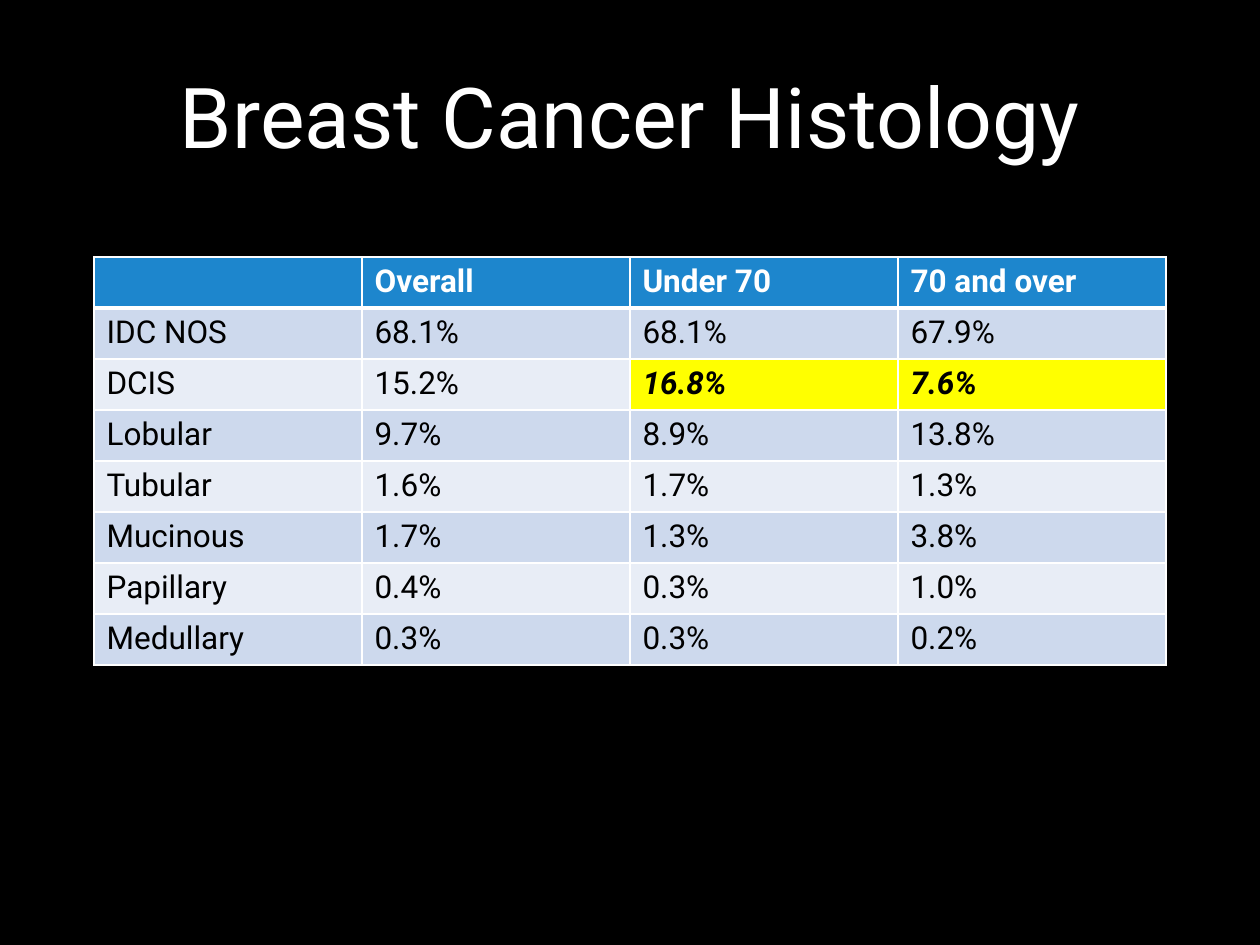
from dataclasses import dataclass

from lxml.etree import SubElement
from pptx import Presentation
from pptx.dml.color import RGBColor
from pptx.enum.text import MSO_ANCHOR as Anchor, MSO_AUTO_SIZE as AutoSize, PP_ALIGN as Align
from pptx.oxml.ns import qn
from pptx.util import Pt

TITLE = "Breast Cancer Histology"
ROWS = [
    ("", "Overall", "Under 70", "70 and over"),
    ("IDC NOS", "68.1%", "68.1%", "67.9%"),
    ("DCIS", "15.2%", "16.8%", "7.6%"),
    ("Lobular", "9.7%", "8.9%", "13.8%"),
    ("Tubular", "1.6%", "1.7%", "1.3%"),
    ("Mucinous", "1.7%", "1.3%", "3.8%"),
    ("Papillary", "0.4%", "0.3%", "1.0%"),
    ("Medullary", "0.3%", "0.3%", "0.2%"),
]
HIGHLIGHTS = {(2, 2), (2, 3)}

SLIDE_SIZE = (1260, 945)
TITLE_BOX = (94, 16, 1072, 197)
TABLE_LEFT, TABLE_TOP = 94, 257
COLUMN_WIDTH, ROW_HEIGHT = 268, 51


@dataclass(frozen=True)
class Theme:
    font: str = "Roboto"
    background: str = "000000"
    light: str = "FFFFFF"
    dark: str = "000000"
    header: str = "1D86CD"
    bands: tuple = ("E8EDF6", "CDD9ED")
    highlight: str = "FFFF00"
    title_size: int = 48
    table_size: int = 18
    thin: int = 1
    thick: int = 3


THEME = Theme()


def px(length):
    return round(length * 914400 / 126)


def paint(fill, color):
    fill.solid()
    fill.fore_color.rgb = RGBColor.from_string(color)


def style(para, size, color, bold=False, italic=False):
    font = para.font
    font.name, font.size = THEME.font, Pt(size)
    font.bold, font.italic = bold, italic
    font.color.rgb = RGBColor.from_string(color)


def add_borders(cell, widths):
    properties = cell._tc.get_or_add_tcPr()
    for index, (side, width) in enumerate(widths.items()):
        line = SubElement(properties, qn(f"a:ln{side}"), w=str(Pt(width)))
        SubElement(SubElement(line, qn("a:solidFill")), qn("a:srgbClr"), val=THEME.light)
        properties.insert(index, line)


def add_title(page):
    box = page.shapes.title
    box.left, box.top, box.width, box.height = map(px, TITLE_BOX)
    frame = box.text_frame
    frame.text = TITLE
    frame.word_wrap = True
    frame.auto_size = AutoSize.NONE
    frame.vertical_anchor = Anchor.MIDDLE
    para = frame.paragraphs[0]
    para.alignment = Align.CENTER
    style(para, THEME.title_size, THEME.light)


def fill_cell(cell, text, row, column):
    header = row == 0
    highlighted = (row, column) in HIGHLIGHTS
    color = THEME.bands[row % 2]
    if header:
        color = THEME.header
    elif highlighted:
        color = THEME.highlight
    cell.text = text
    style(
        cell.text_frame.paragraphs[0],
        THEME.table_size,
        THEME.light if header else THEME.dark,
        bold=header or highlighted,
        italic=highlighted,
    )
    paint(cell.fill, color)
    widths = dict.fromkeys("LRTB", THEME.thin)
    if header:
        widths["B"] = THEME.thick
    elif row == 1:
        widths["T"] = THEME.thick
    add_borders(cell, widths)


def add_histology_table(page):
    size = (COLUMN_WIDTH * len(ROWS[0]), ROW_HEIGHT * len(ROWS))
    frame = page.shapes.add_table(
        len(ROWS), len(ROWS[0]), *map(px, (TABLE_LEFT, TABLE_TOP, *size))
    )
    for row, texts in enumerate(ROWS):
        for column, text in enumerate(texts):
            fill_cell(frame.table.cell(row, column), text, row, column)


def main():
    deck = Presentation()
    deck.slide_width, deck.slide_height = map(px, SLIDE_SIZE)
    page = deck.slides.add_slide(deck.slide_layouts[5])
    paint(page.background.fill, THEME.background)
    add_title(page)
    add_histology_table(page)
    deck.save("out.pptx")


if __name__ == "__main__":
    main()
